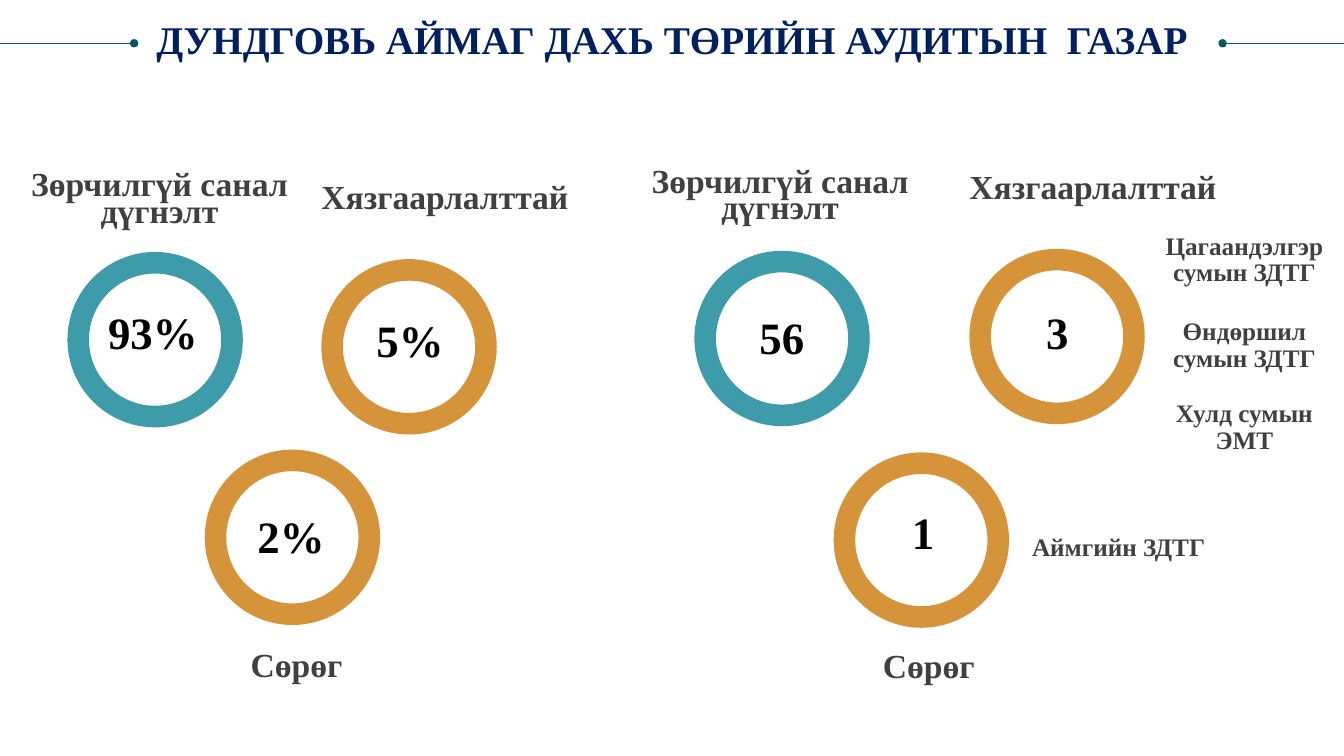
from lxml.etree import SubElement
from pptx import Presentation
from pptx.dml.color import RGBColor
from pptx.enum.shapes import MSO_CONNECTOR as Connector, MSO_SHAPE as Shape
from pptx.enum.text import MSO_ANCHOR as Anchor, MSO_AUTO_SIZE as AutoSize, PP_ALIGN as Align
from pptx.oxml.ns import qn
from pptx.util import Cm, Pt

SLIDE_WIDTH, SLIDE_HEIGHT = 33.87, 19.05
RING_SIZE = 4.42
TEAL, OCHRE = "0D8295", "CB7A09"


def color(hex_code):
    return RGBColor.from_string(hex_code)


class OpinionSlide:
    font = "Times New Roman"
    title_color, caption_color, figure_color, rule_color = "002060", "404040", "000000", "085764"
    line_spacing = Pt(19)

    def __init__(self, deck):
        self.slide = deck.slides.add_slide(deck.slide_layouts[5])
        self.shapes = self.slide.shapes

    def fill_text(self, box, words, size, hex_code, align, spacing):
        """Fill a text holder with one bold run and no inner margins."""
        frame = box.text_frame
        frame.margin_left = frame.margin_right = frame.margin_top = frame.margin_bottom = 0
        frame.word_wrap = True
        frame.auto_size = AutoSize.SHAPE_TO_FIT_TEXT
        frame.vertical_anchor = Anchor.TOP
        paragraph = frame.paragraphs[0]
        paragraph.alignment = align
        paragraph.line_spacing = spacing
        paragraph.space_before = Pt(0)
        run = paragraph.add_run()
        run.text = words
        run.font.name, run.font.size, run.font.bold = self.font, Pt(size), True
        run.font.color.rgb = color(hex_code)

    def title(self, words, left, top, width, height):
        heading = self.shapes.title
        heading.left, heading.top = Cm(left), Cm(top)
        heading.width, heading.height = Cm(width), Cm(height)
        self.fill_text(heading, words, 28, self.title_color, Align.CENTER, 0.9)

    def text(self, words, left, top, width, height, size, hex_code=caption_color, align=Align.CENTER):
        box = self.shapes.add_textbox(Cm(left), Cm(top), Cm(width), Cm(height))
        self.fill_text(box, words, size, hex_code, align, self.line_spacing)

    def figure(self, words, left, top):
        self.text(words, left, top, 2.69, 0.76, 32, self.figure_color)

    def ring(self, left, top, hex_code):
        donut = self.shapes.add_shape(Shape.DONUT, Cm(left), Cm(top), Cm(RING_SIZE), Cm(RING_SIZE))
        donut.adjustments[0] = 0.123
        donut.shadow.inherit = False
        donut.line.fill.background()
        donut.fill.solid()
        donut.fill.fore_color.rgb = color(hex_code)
        fill_color = donut._element.spPr.find(qn("a:solidFill"))[0]
        SubElement(fill_color, qn("a:alpha"), val="80000")

    def dotted_rule(self, dot_x, edge_x, y):
        """Draw a thin line from a dot beside the title to the slide edge."""
        rule = self.shapes.add_connector(Connector.STRAIGHT, Cm(dot_x), Cm(y), Cm(edge_x), Cm(y))
        rule.line.color.rgb = color(self.rule_color)
        rule.line.width = Pt(0.5)
        properties = rule._element.spPr
        SubElement(properties.find(qn("a:ln")), qn("a:headEnd"), type="oval")
        SubElement(properties, qn("a:effectLst"))


# ring left, top, colour; figure, its left and top
OPINION_RINGS = [
    (1.7, 6.35, TEAL, "93%", 2.51, 8.36),
    (8.1, 6.53, OCHRE, "5%", 8.99, 8.56),
    (5.16, 11.33, OCHRE, "2%", 5.99, 13.51),
    (17.5, 6.32, TEAL, "56", 18.36, 8.48),
    (24.43, 6.27, OCHRE, "3", 25.3, 8.36),
    (21.01, 11.4, OCHRE, "1", 21.92, 13.41),
]
# unqualified, qualified and adverse caption corners: shares, then counts
CAPTION_CORNERS = [
    [(0.64, 4.45), (8.1, 4.78), (5.66, 16.56)],
    [(16.28, 4.37), (24.43, 4.52), (21.59, 16.59)],
]
CAPTIONS = [
    ("Зөрчилгүй санал дүгнэлт", 6.76, 1.35, Align.CENTER),
    ("Хязгаарлалттай", 6.76, 0.69, Align.LEFT),
    ("Сөрөг", 2.97, 0.69, Align.RIGHT),
]
AUDITED_BODIES = [
    ("Цагаандэлгэр сумын ЗДТГ", 29.01, 5.89, 4.7, 1.35, Align.CENTER),
    ("Өндөршил сумын ЗДТГ", 29.29, 8.05, 4.14, 1.35, Align.CENTER),
    ("Хулд сумын ЭМТ", 29.29, 10.11, 4.14, 1.35, Align.CENTER),
    ("Аймгийн ЗДТГ", 26.01, 13.49, 4.5, 0.69, Align.LEFT),
]


def main():
    deck = Presentation()
    deck.slide_width, deck.slide_height = Cm(SLIDE_WIDTH), Cm(SLIDE_HEIGHT)
    page = OpinionSlide(deck)

    page.title("ДУНДГОВЬ АЙМАГ ДАХЬ ТӨРИЙН АУДИТЫН  ГАЗАР", 0.64, 0.53, 32.59, 1.07)
    page.dotted_rule(3.38, 0, 1.09)
    page.dotted_rule(30.81, SLIDE_WIDTH, 1.09)

    for left, top, hue, amount, amount_left, amount_top in OPINION_RINGS:
        page.ring(left, top, hue)
        page.figure(amount, amount_left, amount_top)

    for corners in CAPTION_CORNERS:
        for (left, top), (words, width, height, align) in zip(corners, CAPTIONS):
            page.text(words, left, top, width, height, 24, align=align)

    for words, left, top, width, height, align in AUDITED_BODIES:
        page.text(words, left, top, width, height, 18, align=align)

    deck.save("out.pptx")


if __name__ == "__main__":
    main()
